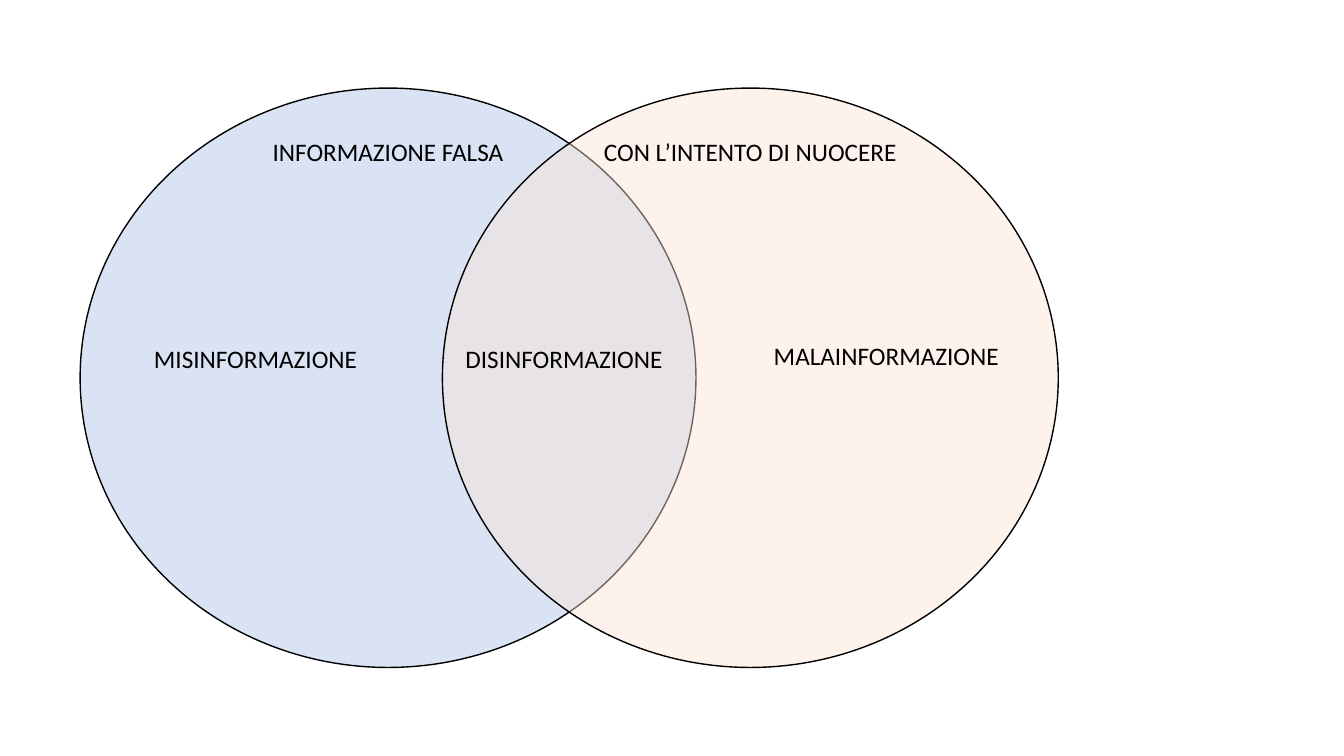
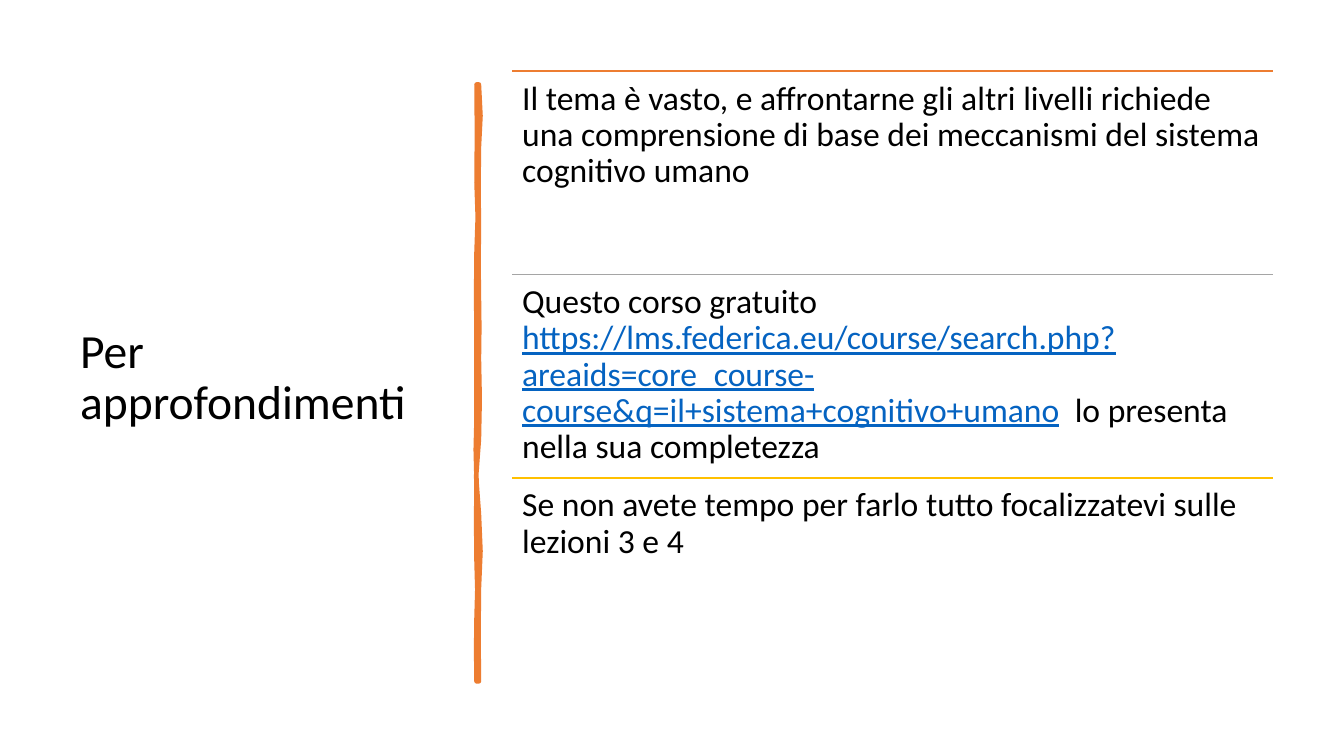
import pptx
import pptx.util
import pptx.dml.color
import pptx.enum.shapes
import pptx.enum.text
import pptx.oxml.ns
import lxml.etree

Cm = pptx.util.Cm
Pt = pptx.util.Pt
FONT = "Calibri"
HEX = {
    "ink": "000000",
    "blue": "DAE3F3",
    "peach": "FBE5D6",
    "orange": "ED7D31",
    "grey": "A5A5A5",
    "gold": "FFC000",
    "link": "0563C1",
}
MID = pptx.enum.text.MSO_ANCHOR.MIDDLE
TOP = pptx.enum.text.MSO_ANCHOR.TOP
LEFT = pptx.enum.text.PP_ALIGN.LEFT
CENTER = pptx.enum.text.PP_ALIGN.CENTER

RIGHT_EDGE = [
    (1.58, 0.04), (3.61, -0.01), (5.34, -0.01), (6.91, 0.01),
    (8.94, 0.02), (10.82, -0.07), (12.7, 0.04), (15.04, -0.01),
]
LEFT_EDGE = [
    (13.44, -0.01), (12.02, 0.02), (9.99, -0.01), (8.41, -0.02),
    (6.38, 0), (4.22, -0.01), (2.47, 0.03), (0, 0.01),
]


def color(name):
    return pptx.dml.color.RGBColor.from_string(HEX[name])


def tag(node, name, **attrs):
    return lxml.etree.SubElement(node, pptx.oxml.ns.qn(name), **attrs)


def fill(frame, runs, size, align=LEFT, space=1.0):
    para = frame.paragraphs[0]
    para.alignment = align
    para.line_spacing = space
    for text, tone in runs:
        run = para.add_run()
        run.text = text
        run.font.name = FONT
        run.font.size = Pt(size)
        run.font.color.rgb = color(tone)
        if tone == "link":
            run.font.underline = True


def write(slide, box, runs, size, anchor=TOP, wrap=True, space=1.0, inset=0.13):
    frame = slide.shapes.add_textbox(*map(Cm, box)).text_frame
    frame.word_wrap = wrap
    frame.vertical_anchor = anchor
    frame.margin_left = frame.margin_right = Cm(0.25)
    frame.margin_top = frame.margin_bottom = Cm(inset)
    fill(frame, runs, size, space=space)


def oval(slide, box, text, tone, alpha):
    kind = pptx.enum.shapes.MSO_SHAPE.OVAL
    shape = slide.shapes.add_shape(kind, *map(Cm, box))
    shape.shadow.inherit = False
    shape.fill.solid()
    shape.fill.fore_color.rgb = color(tone)
    if alpha < 100:
        node = shape._element.spPr.find(".//" + pptx.oxml.ns.qn("a:srgbClr"))
        tag(node, "a:alpha", val=str(alpha * 1000))
    shape.line.color.rgb = color("ink")
    shape.line.width = Pt(1)
    frame = shape.text_frame
    frame.vertical_anchor = TOP
    frame.margin_top = Cm(-0.92)
    fill(frame, [(text, "ink")], 18, CENTER)


def venn(slide, box):
    left, top, width, height = box
    size = 15.52
    ovals = [
        (0, "INFORMAZIONE FALSA", "blue", 100),
        (width - size, "CON L’INTENTO DI NUOCERE", "peach", 44),
    ]
    for x, text, tone, alpha in ovals:
        oval(slide, (left + x, top, size, height), text, tone, alpha)
    labels = [
        ("DISINFORMAZIONE", 9.46, 6.29, 5.66),
        ("MISINFORMAZIONE", 1.61, 6.29, 5.66),
        ("MALAINFORMAZIONE", 17.23, 6.22, 6.22),
    ]
    for text, x, y, wide in labels:
        spot = (left + x, top + y, wide, 1.02)
        write(slide, spot, [(text, "ink")], 18, wrap=False)


def edge(x, start, bends):
    for end, shift in bends:
        yield x + shift, (start + end) / 2
        yield x, end
        start = end


def rod(slide, box):
    left, top, width, height = box
    points = [(width, 0), *edge(width, 0, RIGHT_EDGE), (0, height)]
    points += edge(0, height, LEFT_EDGE)
    spots = [(Cm(left + x), Cm(top + y)) for x, y in points]
    path = slide.shapes.build_freeform(*spots[0])
    path.add_line_segments(spots[1:], close=True)
    shape = path.convert_to_shape()
    shape.shadow.inherit = False
    shape.fill.solid()
    shape.fill.fore_color.rgb = color("orange")
    shape.line.color.rgb = color("orange")
    shape.line.width = Pt(3.25)
    tag(shape._element.spPr.find(pptx.oxml.ns.qn("a:ln")), "a:round")


def rule(slide, left, top, width, tone):
    kind = pptx.enum.shapes.MSO_CONNECTOR.STRAIGHT
    line = slide.shapes.add_connector(
        kind, Cm(left), Cm(top), Cm(left + width), Cm(top)
    )
    line.line.color.rgb = color(tone)
    line.line.width = Pt(1)
    tag(line._element.spPr, "a:effectLst")


def rows(slide, box, items):
    left, top, width, height = box
    pitch = height / len(items)
    for index, (tone, runs) in enumerate(items):
        y = top + index * pitch
        rule(slide, left, y, width, tone)
        spot = (left, y, width, pitch)
        write(slide, spot, runs, 24, space=0.9, inset=0.25)


def main():
    deck = pptx.Presentation()
    deck.slide_width = Cm(33.87)
    deck.slide_height = Cm(19.05)
    blank = deck.slide_layouts[6]

    venn(deck.slides.add_slide(blank), (2.02, 2.22, 24.65, 14.6))

    more = deck.slides.add_slide(blank)
    title = [("Per approfondimenti", "ink")]
    write(more, (1.77, 1.78, 9.5, 15.52), title, 34, anchor=MID, space=0.9)
    rod(more, (12.01, 2.13, 0.06, 15.04))
    rows(more, (12.91, 1.79, 19.18, 15.38), [
        ("orange", [
            ("Il tema è vasto, e affrontarne gli altri livelli richiede "
             "una comprensione di base dei meccanismi del sistema "
             "cognitivo umano", "ink"),
        ]),
        ("grey", [
            ("Questo corso gratuito ", "ink"),
            ("https://lms.federica.eu/course/search.php?areaids=core_course-"
             "course&q=il+sistema+cognitivo+umano", "link"),
            ("  lo presenta nella sua completezza", "ink"),
        ]),
        ("gold", [
            ("Se non avete tempo per farlo tutto focalizzatevi sulle "
             "lezioni 3 e 4", "ink"),
        ]),
    ])
    deck.save("out.pptx")


if __name__ == "__main__":
    main()
